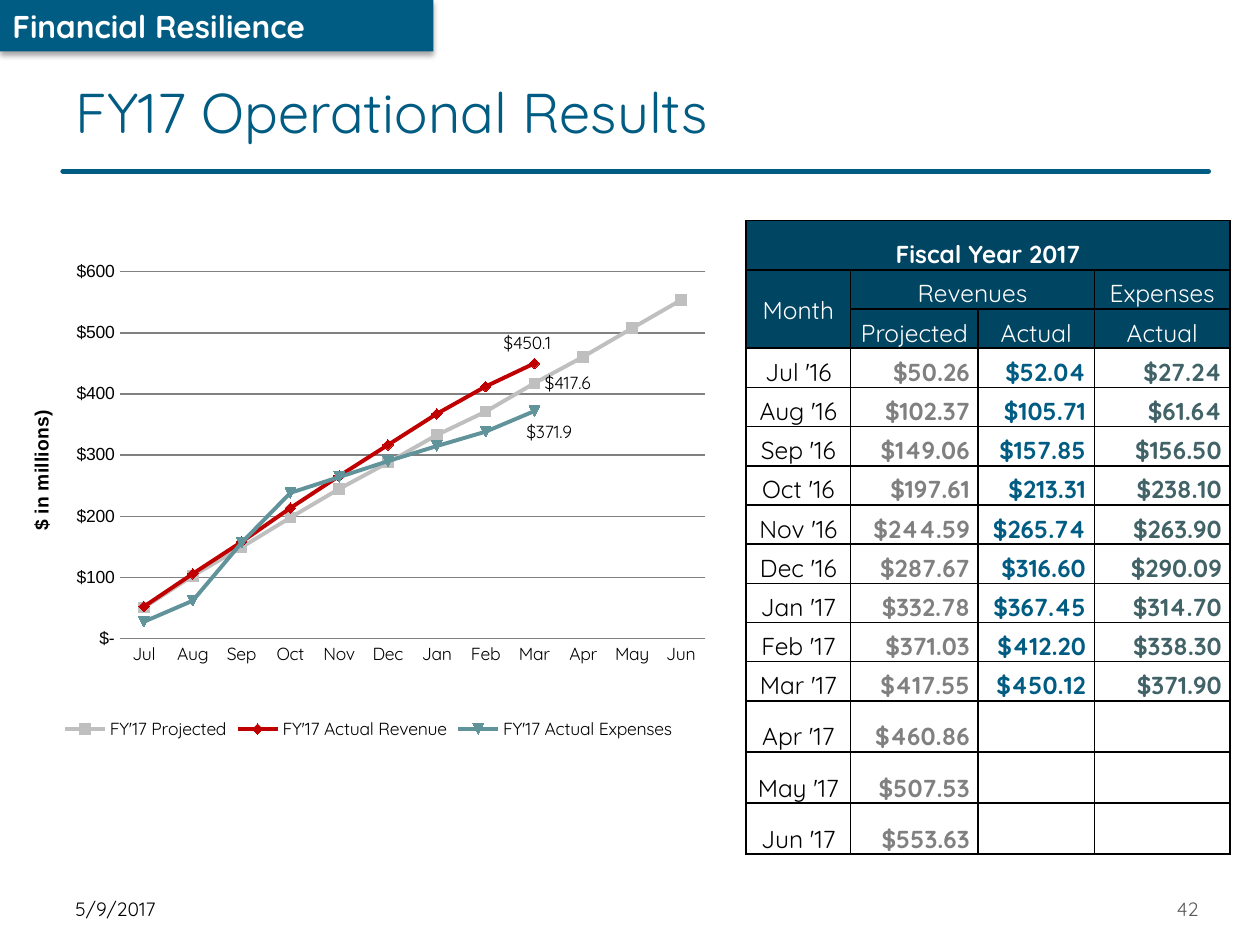
from dataclasses import dataclass

import pptx
import pptx.chart.data
import pptx.dml.color
import pptx.enum.chart
import pptx.enum.shapes
import pptx.enum.text
import pptx.oxml
import pptx.oxml.ns
import pptx.util

Cm = pptx.util.Cm
Pt = pptx.util.Pt
Align = pptx.enum.text.PP_ALIGN
Anchor = pptx.enum.text.MSO_ANCHOR
Fit = pptx.enum.text.MSO_AUTO_SIZE
Marks = pptx.enum.chart
Shapes = pptx.enum.shapes


@dataclass(frozen=True)
class Theme:
    face: str = "Quicksand"
    plain: str = "Arial"
    blue: str = "005C82"
    navy: str = "004562"
    slate: str = "416266"
    teal: str = "61939A"
    red: str = "C00000"
    black: str = "000000"
    white: str = "FFFFFF"
    gray: str = "808080"
    silver: str = "BFBFBF"
    dim: str = "595959"
    title: int = 32
    tab: int = 18
    cell: int = 14
    small: int = 11
    chart: int = 10


MONTHS = "Jul Aug Sep Oct Nov Dec Jan Feb Mar Apr May Jun".split()
PLAN = [50.26, 102.37, 149.06, 197.61, 244.59, 287.67,
        332.78, 371.03, 417.55, 460.86, 507.53, 553.63]
SALES = [52.04, 105.71, 157.85, 213.31, 265.74, 316.60,
         367.45, 412.20, 450.12, None, None, None]
COSTS = [27.24, 61.64, 156.50, 238.10, 263.90, 290.09,
         314.70, 338.30, 371.90, None, None, None]
LAST = 8


def rgb(code):
    return pptx.dml.color.RGBColor.from_string(code)


def apply(item, **values):
    for key, value in values.items():
        setattr(item, key, value)


def node(tag, body="", attrs=""):
    space = pptx.oxml.ns.nsdecls(tag.split(":")[0])
    return pptx.oxml.parse_xml(f"<{tag} {space} {attrs}>{body}</{tag}>")


def place(parent, index, **values):
    for old in parent.xpath("./c:layout"):
        parent.remove(old)
    body = "".join(f'<c:{key} val="{value}"/>' for key, value in values.items())
    parent.insert(index, node("c:layout", f"<c:manualLayout>{body}</c:manualLayout>"))


class Deck:
    def __init__(self, theme):
        self.theme = theme
        self.show = pptx.Presentation()
        apply(self.show, slide_width=Cm(25.4), slide_height=Cm(19.05))
        self.slide = self.show.slides.add_slide(self.show.slide_layouts[5])

    def font(self, font, size, color, bold=False, name=None):
        apply(font, size=Pt(size), bold=bold, name=name or self.theme.face)
        font.color.rgb = rgb(color)

    def label(self, frame, text, size, color, bold=False, align=Align.LEFT):
        frame.text = text
        para = frame.paragraphs[0]
        para.alignment = align
        self.font(para.runs[0].font, size, color, bold)

    def title(self, text, *box):
        shape = self.slide.shapes.title
        apply(shape, **dict(zip(("left", "top", "width", "height"), map(Cm, box))))
        apply(shape.text_frame, auto_size=Fit.NONE, vertical_anchor=Anchor.MIDDLE)
        self.label(shape.text_frame, text, self.theme.title, self.theme.blue)

    def text(self, text, color, align, *box):
        frame = self.slide.shapes.add_textbox(*map(Cm, box)).text_frame
        apply(frame, word_wrap=True, vertical_anchor=Anchor.MIDDLE,
              margin_top=0, margin_bottom=0)
        self.label(frame, text, self.theme.small, color, align=align)

    def tab(self, text, *box):
        kind = Shapes.MSO_SHAPE.RECTANGLE
        shape = self.slide.shapes.add_shape(kind, *map(Cm, box))
        shape.fill.solid()
        shape.fill.fore_color.rgb = rgb(self.theme.blue)
        shape.line.fill.background()
        glow = ('<a:outerShdw blurRad="39400" dist="22900" dir="5400000" rotWithShape="0">'
                f'<a:srgbClr val="{self.theme.black}"><a:alpha val="35000"/></a:srgbClr>'
                '</a:outerShdw>')
        shape.element.spPr.append(node("a:effectLst", glow))
        shape.text_frame.vertical_anchor = Anchor.MIDDLE
        self.label(shape.text_frame, text, self.theme.tab, self.theme.white, True)

    def rule(self, left, top, right):
        kind = Shapes.MSO_CONNECTOR.STRAIGHT
        line = self.slide.shapes.add_connector(kind, Cm(left), Cm(top), Cm(right), Cm(top))
        line.line.color.rgb = rgb(self.theme.blue)
        line.line.width = Pt(3)
        props = line.element.spPr
        props.xpath("./a:ln")[0].set("cap", "rnd")
        props.append(node("a:effectLst"))

    def edge(self, cell):
        props = cell._tc.get_or_add_tcPr()
        body = f'<a:solidFill><a:srgbClr val="{self.theme.black}"/></a:solidFill>'
        for side in "LRTB":
            props.append(node(f"a:ln{side}", body, 'w="12700"'))

    def cell(self, cell, text, color, bold=False, align=Align.CENTER, pad=0.03):
        apply(cell, margin_left=Cm(0.03), margin_right=Cm(pad), margin_top=Cm(0.03),
              margin_bottom=0, vertical_anchor=Anchor.BOTTOM)
        self.label(cell.text_frame, text, self.theme.cell, color, bold, align)

    def table(self, left, top, widths, heights, heads, spans, rows, tones):
        theme = self.theme
        size = Cm(sum(widths)), Cm(sum(heights))
        grid = self.slide.shapes.add_table(
            len(heights), len(widths), Cm(left), Cm(top), *size).table
        apply(grid, first_row=False, horz_banding=False)
        for col, width in zip(grid.columns, widths):
            col.width = Cm(width)
        for index, height in enumerate(heights):
            grid.rows[index].height = Cm(height)
            for cell in grid.rows[index].cells:
                self.edge(cell)
                if index < len(heads):
                    cell.fill.solid()
                    cell.fill.fore_color.rgb = rgb(theme.navy)
                else:
                    cell.fill.background()
        for start, end in spans:
            grid.cell(*start).merge(grid.cell(*end))
        for row, line in enumerate(heads):
            for col, text in line.items():
                self.cell(grid.cell(row, col), text, theme.white, bold=row == 0)
        grid.cell(1, 0).vertical_anchor = Anchor.MIDDLE
        for row, (label, *values) in enumerate(rows, len(heads)):
            self.cell(grid.cell(row, 0), label, theme.black)
            for col, (value, tone) in enumerate(zip(values, tones), 1):
                if value is not None:
                    self.cell(grid.cell(row, col), f"${value:.2f}", tone, True,
                              Align.RIGHT, 0.17)

    def chart(self, box, cats, lines):
        theme = self.theme
        data = pptx.chart.data.CategoryChartData()
        data.categories = cats
        for name, values, *rest in lines:
            data.add_series(name, values)
        kind = Marks.XL_CHART_TYPE.LINE_MARKERS
        chart = self.slide.shapes.add_chart(kind, *map(Cm, box), data).chart
        self.font(chart.font, theme.chart, theme.black)
        apply(chart, has_title=False, has_legend=True)
        apply(chart.legend, position=Marks.XL_LEGEND_POSITION.BOTTOM,
              include_in_layout=False)
        none = Marks.XL_TICK_MARK.NONE
        apply(chart.category_axis, major_tick_mark=none, minor_tick_mark=none)
        axis = chart.value_axis
        apply(axis, major_tick_mark=none, minor_tick_mark=none, minimum_scale=0,
              maximum_scale=600, major_unit=100, has_major_gridlines=True)
        for line in (chart.category_axis.format.line, axis.major_gridlines.format.line):
            line.color.rgb = rgb(theme.gray)
            line.width = Pt(0.75)
        axis.format.line.fill.background()
        apply(axis.tick_labels, number_format='"$"#,##0;-"$"#,##0;"$-"',
              number_format_is_linked=False)
        self.font(axis.tick_labels.font, theme.chart, theme.black, name=theme.plain)
        self.label(axis.axis_title.text_frame, "$ in millions)", theme.small,
                   theme.black, True, Align.CENTER)
        axis.axis_title.text_frame.paragraphs[0].runs[0].font.name = theme.plain
        place(chart.element.xpath(".//c:valAx/c:title")[0], 1,
              xMode="edge", yMode="edge", x=0.03, y=0.3)
        place(chart.element.xpath(".//c:plotArea")[0], 0, layoutTarget="inner",
              xMode="edge", yMode="edge", x=0.16, y=0.02, w=0.8, h=0.76)
        plot = chart.plots[0]
        plot.vary_by_categories = False
        for series, (name, values, tone, spot, shift) in zip(plot.series, lines):
            series.smooth = False
            series.format.line.color.rgb = rgb(tone)
            series.format.line.width = Pt(2.25)
            apply(series.marker, style=Marks.XL_MARKER_STYLE.AUTOMATIC, size=6)
            series.marker.format.fill.solid()
            series.marker.format.fill.fore_color.rgb = rgb(tone)
            series.marker.format.line.color.rgb = rgb(tone)
            label = series.points[LAST].data_label
            self.font(label.font, theme.chart, theme.black)
            label.position = spot
            mark = series._element.xpath(".//c:dLbl")[0]
            place(mark, 1, x=shift, y=0)
            code = 'formatCode="&quot;$&quot;0.0" sourceLinked="0"'
            mark.insert(2, node("c:numFmt", "", code))


def main():
    theme = Theme()
    deck = Deck(theme)
    deck.tab("Financial Resilience", 0, 0, 8.74, 1.04)
    deck.rule(1.27, 3.45, 24.36)
    deck.title("FY17 Operational Results", 1.27, 1.09, 19.63, 2.29)
    heads = [{0: "Fiscal Year 2017"}, {0: "Month", 1: "Revenues", 3: "Expenses"},
             {1: "Projected", 2: "Actual", 3: "Actual"}]
    spans = [((0, 0), (0, 3)), ((1, 0), (2, 0)), ((1, 1), (1, 2))]
    labels = [f"{month} '{16 if i < 6 else 17}" for i, month in enumerate(MONTHS)]
    deck.table(15.04, 4.45, [2.11, 2.57, 2.34, 2.74], [0.99] + [0.79] * 14, heads,
               spans, zip(labels, PLAN, SALES, COSTS),
               [theme.gray, theme.blue, theme.slate])
    spot = Marks.XL_LABEL_POSITION
    deck.chart((0.05, 5.28, 14.76, 9.73), MONTHS, [
        ("FY'17 Projected", PLAN, theme.silver, spot.RIGHT, 0),
        ("FY'17 Actual Revenue", SALES, theme.red, spot.ABOVE, -0.01),
        ("FY'17 Actual Expenses", COSTS, theme.teal, spot.BELOW, 0.02)])
    deck.text("5/9/2017", theme.black, Align.LEFT, 1.27, 18.06, 5, 0.53)
    deck.text("42", theme.dim, Align.RIGHT, 22.28, 18.06, 2.13, 0.53)
    deck.show.save("out.pptx")


if __name__ == "__main__":
    main()
